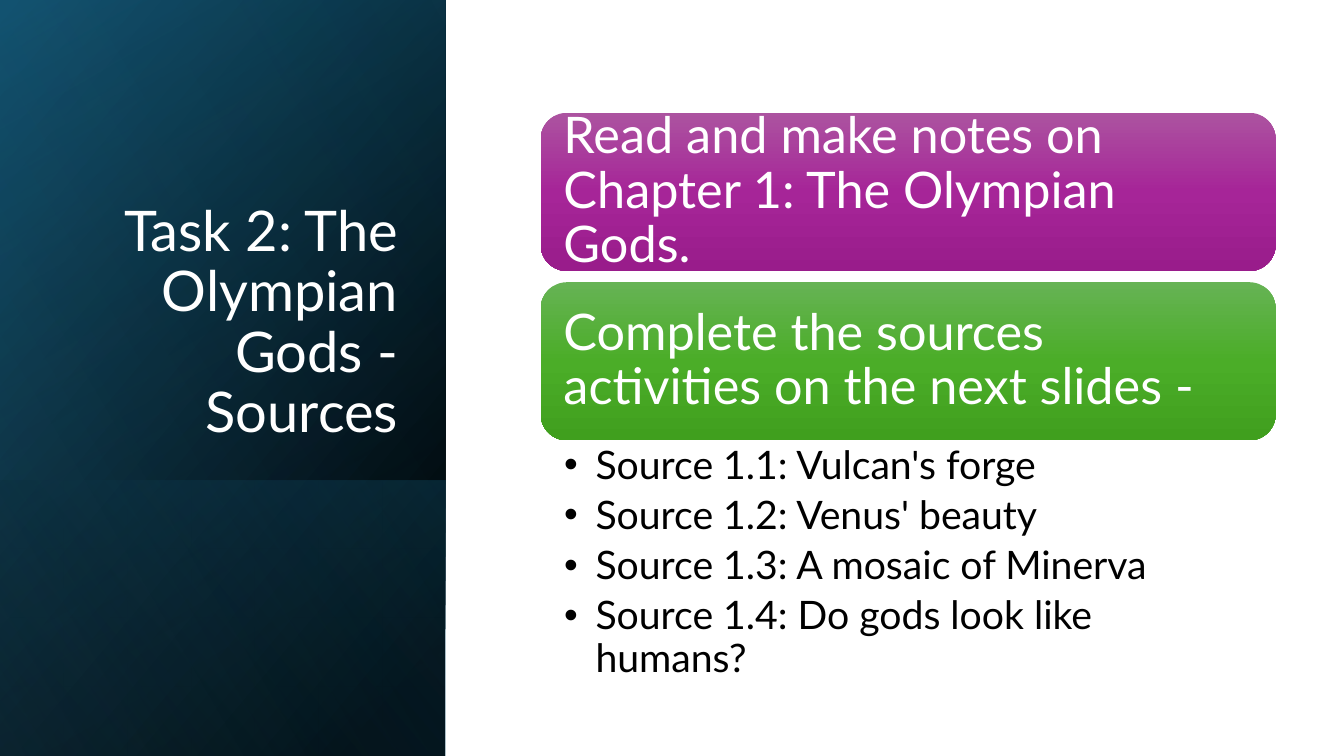
import math
from dataclasses import dataclass
from typing import NamedTuple, Optional

import lxml.etree
import pptx
import pptx.dml.color
import pptx.enum.shapes
import pptx.enum.text
import pptx.oxml.ns
import pptx.util

Pt = pptx.util.Pt
qn = pptx.oxml.ns.qn
Align = pptx.enum.text.PP_ALIGN
Anchor = pptx.enum.text.MSO_ANCHOR
ShapeType = pptx.enum.shapes.MSO_SHAPE


@dataclass(frozen=True)
class Theme:
    font: str = "Lato"
    bullet_font: str = "Arial"
    black: str = "000000"
    white: str = "FFFFFF"
    teal: str = "156082"
    deep_teal: str = "104862"
    sky: str = "46B1E1"
    title_size: float = 40
    card_size: float = 36
    bullet_size: float = 28


THEME = Theme()


class Stop(NamedTuple):
    position: int
    color: str
    alpha: int = 100


class Gradient(NamedTuple):
    angle: int
    stops: tuple[Stop, ...]


class Panel(NamedTuple):
    """A band across the left side, measured as it shows on the slide."""
    top: float
    height: float
    gradient: Gradient


class Card(NamedTuple):
    text: str
    colors: tuple[str, str, str]


SLIDE_WIDTH, SLIDE_HEIGHT = 960, 540
SIDE_WIDTH = 318.24
CARD_LEFT, CARD_TOP, CARD_WIDTH, CARD_HEIGHT, CARD_PITCH = 386.2, 80.6, 525, 113, 121
CARD_INSET = 5.5

BASE_PANELS = (
    Panel(0, 540, Gradient(50, (Stop(8, THEME.black), Stop(100, THEME.deep_teal)))),
    Panel(0, 540, Gradient(30, (Stop(0, THEME.black, 0), Stop(99, THEME.teal, 46)))),
    Panel(343.2, 196.8, Gradient(130, (Stop(2, THEME.teal, 29), Stop(100, THEME.black, 30)))),
)
GLOW_PANEL = Panel(0, 540, Gradient(120, (Stop(0, THEME.black, 0), Stop(99, THEME.sky, 11))))

# Disc: frame before turning, and the outline as it shows on the slide
DISC_LEFT, DISC_TOP, DISC_WIDTH, DISC_HEIGHT, DISC_TURN = -39.6, 76.3, 307.4, 329, 343.9
DISC_GRADIENT = Gradient(30, (Stop(29, THEME.black, 0), Stop(100, THEME.teal, 43)))
DISC_OUTLINE = (
    ("moveTo", ((107.3, 79.2),)),
    ("cubicBezTo", ((177.1, 80.6), (241.2, 127.4), (261.4, 198))),
    ("cubicBezTo", ((286.6, 285.8), (236.2, 376.6), (149, 401.8))),
    ("cubicBezTo", ((94.3, 417.6), (38.2, 403.9), (-2.2, 370.1))),
    ("lnTo", ((-10.8, 362.2),)),
    ("lnTo", ((-10.8, 126),)),
    ("lnTo", ((0, 115.9),)),
    ("cubicBezTo", ((16.6, 102.2), (36, 92.2), (57.6, 85.7))),
    ("cubicBezTo", ((74.2, 81.4), (90.7, 79.2), (107.3, 79.2))),
    ("close", ()),
)

CARDS = (
    Card("Read and make notes on Chapter 1: The Olympian Gods.",
         ("AC53A0", "A62598", "991C8B")),
    Card("Complete the sources activities on the next slides -",
         ("66B354", "4BAD28", "409F1E")),
)
SOURCES = (
    "Source 1.1: Vulcan's forge",
    "Source 1.2: Venus' beauty",
    "Source 1.3: A mosaic of Minerva",
    "Source 1.4: Do gods look like humans?",
)


def paint(shape, gradient: Gradient) -> None:
    shape.shadow.inherit = False
    shape.line.fill.background()
    shape.fill.gradient()
    fill = shape._element.spPr.find(qn("a:gradFill"))
    stop_list = fill.find(qn("a:gsLst"))
    for old_stop in list(stop_list):
        stop_list.remove(old_stop)
    for stop in gradient.stops:
        entry = lxml.etree.SubElement(stop_list, qn("a:gs"), pos=str(stop.position * 1000))
        color = lxml.etree.SubElement(entry, qn("a:srgbClr"), val=stop.color)
        if stop.alpha < 100:
            lxml.etree.SubElement(color, qn("a:alpha"), val=str(stop.alpha * 1000))
    direction = fill.find(qn("a:lin"))
    direction.set("ang", str(gradient.angle * 60000))
    direction.set("scaled", "0")


def write(shape, *lines: str, size: float, color: str, align=Align.LEFT,
          anchor=Anchor.TOP, insets=(7.2, 3.6, 7.2, 3.6), space_after: float = 0,
          bullet_indent: Optional[float] = None) -> None:
    frame = shape.text_frame
    frame.word_wrap = True
    frame.auto_size = pptx.enum.text.MSO_AUTO_SIZE.NONE
    frame.vertical_anchor = anchor
    frame.margin_left, frame.margin_top, frame.margin_right, frame.margin_bottom = map(Pt, insets)
    for index, line in enumerate(lines):
        paragraph = frame.paragraphs[0] if index == 0 else frame.add_paragraph()
        paragraph.alignment = align
        paragraph.line_spacing = 0.9
        paragraph.space_before = Pt(0)
        paragraph.space_after = Pt(space_after)
        if bullet_indent is not None:
            paragraph.level = 1
            properties = paragraph._p.get_or_add_pPr()
            properties.set("marL", str(Pt(bullet_indent)))
            properties.set("indent", str(-Pt(bullet_indent)))
            lxml.etree.SubElement(properties, qn("a:buFont"), typeface=THEME.bullet_font)
            lxml.etree.SubElement(properties, qn("a:buChar"), char="•")
        run = paragraph.add_run()
        run.text = line
        run.font.name = THEME.font
        run.font.size = Pt(size)
        run.font.color.rgb = pptx.dml.color.RGBColor.from_string(color)


def add_panel(slide, panel: Panel) -> None:
    # The frame is turned a quarter, so its width runs down the slide
    left = (SIDE_WIDTH - panel.height) / 2
    top = panel.top + (panel.height - SIDE_WIDTH) / 2
    shape = slide.shapes.add_shape(ShapeType.RECTANGLE, Pt(left), Pt(top),
                                   Pt(panel.height), Pt(SIDE_WIDTH))
    shape.rotation = 90
    shape._element.spPr.find(qn("a:xfrm")).set("flipH", "1")
    paint(shape, panel.gradient)


def add_disc(slide) -> None:
    right, bottom = DISC_LEFT + DISC_WIDTH, DISC_TOP + DISC_HEIGHT
    builder = slide.shapes.build_freeform(DISC_LEFT, DISC_TOP, scale=float(Pt(1)))
    builder.add_line_segments(((right, DISC_TOP), (right, bottom), (DISC_LEFT, bottom)))
    shape = builder.convert_to_shape()

    # Curves replace the frame's straight sides, turned back into its own axes
    outline = next(shape._element.spPr.iter(qn("a:path")))
    for side in list(outline):
        outline.remove(side)
    turn = math.radians(360 - DISC_TURN)
    for command, points in DISC_OUTLINE:
        step = lxml.etree.SubElement(outline, qn(f"a:{command}"))
        for x, y in points:
            across = x - DISC_LEFT - DISC_WIDTH / 2
            down = y - DISC_TOP - DISC_HEIGHT / 2
            local_x = DISC_WIDTH / 2 + across * math.cos(turn) - down * math.sin(turn)
            local_y = DISC_HEIGHT / 2 + across * math.sin(turn) + down * math.cos(turn)
            lxml.etree.SubElement(step, qn("a:pt"), x=str(Pt(local_x)), y=str(Pt(local_y)))
    shape.rotation = DISC_TURN
    paint(shape, DISC_GRADIENT)


def add_card(slide, card: Card, top: float) -> None:
    shape = slide.shapes.add_shape(ShapeType.ROUNDED_RECTANGLE, Pt(CARD_LEFT), Pt(top),
                                   Pt(CARD_WIDTH), Pt(CARD_HEIGHT))
    paint(shape, Gradient(90, tuple(Stop(50 * index, color)
                                    for index, color in enumerate(card.colors))))
    label = slide.shapes.add_textbox(Pt(CARD_LEFT + CARD_INSET), Pt(top + CARD_INSET),
                                     Pt(CARD_WIDTH - 2 * CARD_INSET),
                                     Pt(CARD_HEIGHT - 2 * CARD_INSET))
    write(label, card.text, size=THEME.card_size, color=THEME.white,
          anchor=Anchor.MIDDLE, insets=(10.8,) * 4)


def main() -> None:
    presentation = pptx.Presentation()
    presentation.slide_width, presentation.slide_height = Pt(SLIDE_WIDTH), Pt(SLIDE_HEIGHT)
    slide = presentation.slides.add_slide(presentation.slide_layouts[5])

    # Dark side backdrop
    for panel in BASE_PANELS:
        add_panel(slide, panel)
    add_disc(slide)
    add_panel(slide, GLOW_PANEL)

    # Title, brought in front of the backdrop
    title = slide.shapes.title
    title.left, title.top, title.width, title.height = Pt(46), Pt(132.8), Pt(245.5), Pt(188.6)
    write(title, "Task 2: The Olympian Gods - Sources", size=THEME.title_size,
          color=THEME.white, align=Align.RIGHT, anchor=Anchor.BOTTOM)
    title._element.getparent().append(title._element)

    # Task cards, then the source list under the last one
    for index, card in enumerate(CARDS):
        add_card(slide, card, CARD_TOP + index * CARD_PITCH)
    list_top = CARD_TOP + (len(CARDS) - 1) * CARD_PITCH + CARD_HEIGHT
    source_list = slide.shapes.add_textbox(Pt(CARD_LEFT), Pt(list_top), Pt(CARD_WIDTH), Pt(152.6))
    write(source_list, *SOURCES, size=THEME.bullet_size, color=THEME.black,
          insets=(16.7, 3.6, 20.2, 3.6), space_after=5.6, bullet_indent=22.5)

    presentation.save("out.pptx")


if __name__ == "__main__":
    main()
